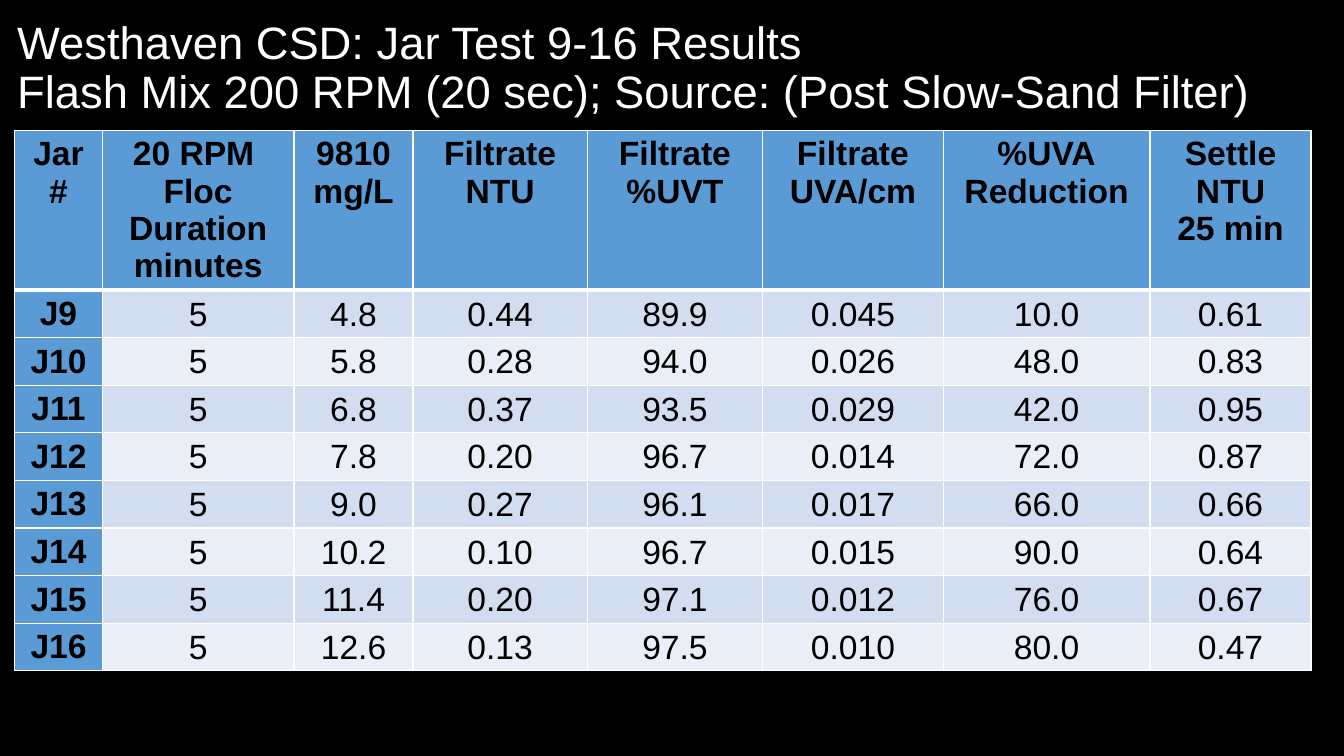
"""Build the jar test results slide."""
from lxml.etree import fromstring
from pptx import Presentation
from pptx.dml.color import RGBColor
from pptx.enum.text import MSO_ANCHOR, MSO_AUTO_SIZE, PP_ALIGN
from pptx.util import Cm, Pt

TITLE = [
    "Westhaven CSD: Jar Test 9-16 Results",
    "Flash Mix 200 RPM (20 sec); Source: (Post Slow-Sand Filter)",
]
HEAD = ["Jar\n#", "20 RPM \nFloc\nDuration\nminutes", "9810\nmg/L", "Filtrate\nNTU",
        "Filtrate\n%UVT", "Filtrate\nUVA/cm", "%UVA\nReduction", "Settle\nNTU\n25 min"]
JARS = [
    ("J9", "5", "4.8", "0.44", "89.9", "0.045", "10.0", "0.61"),
    ("J10", "5", "5.8", "0.28", "94.0", "0.026", "48.0", "0.83"),
    ("J11", "5", "6.8", "0.37", "93.5", "0.029", "42.0", "0.95"),
    ("J12", "5", "7.8", "0.20", "96.7", "0.014", "72.0", "0.87"),
    ("J13", "5", "9.0", "0.27", "96.1", "0.017", "66.0", "0.66"),
    ("J14", "5", "10.2", "0.10", "96.7", "0.015", "90.0", "0.64"),
    ("J15", "5", "11.4", "0.20", "97.1", "0.012", "76.0", "0.67"),
    ("J16", "5", "12.6", "0.13", "97.5", "0.010", "80.0", "0.47"),
]
WIDTHS = [2.21, 4.83, 3, 4.39, 4.42, 4.55, 5.21, 4.06]
HEIGHTS = [2.64] + [1.12] * len(JARS)
COLORS = {"back": "000000", "title": "FFFFFF", "text": "000000", "line": "FFFFFF",
          "head": "5B9BD5", "odd": "D2DEEF", "even": "EAEFF7"}
FONT = "Arial"
DML = "http://schemas.openxmlformats.org/drawingml/2006/main"


def color(name):
    return RGBColor.from_string(COLORS[name])


def style(par, size, name, bold, align):
    par.alignment = align
    font = par.font
    font.name, font.size, font.bold = FONT, Pt(size), bold
    font.color.rgb = color(name)


def edge(cell, row):
    props = cell._tc.get_or_add_tcPr()
    thick = {"T": 3 if row == 1 else 1, "B": 3 if row == 0 else 1}
    for spot, side in enumerate("LRTB"):
        width = Pt(thick.get(side, 1))
        props.insert(spot, fromstring(
            f'<a:ln{side} xmlns:a="{DML}" w="{width}"><a:solidFill>'
            f'<a:srgbClr val="{COLORS["line"]}"/></a:solidFill></a:ln{side}>'))


def fill_cell(cell, text, row, col):
    label = row == 0 or col == 0
    cell.text = text
    for par in cell.text_frame.paragraphs:
        style(par, 24, "text", label, PP_ALIGN.CENTER)
    if not label:
        cell.vertical_anchor = MSO_ANCHOR.MIDDLE
        cell.margin_left = cell.margin_right = cell.margin_top = Cm(0.03)
        cell.margin_bottom = 0
    cell.fill.solid()
    cell.fill.fore_color.rgb = color("head" if label else "odd" if row % 2 else "even")
    edge(cell, row)


def add_title(slide):
    title = slide.shapes.title
    title.left, title.top, title.width, title.height = Cm(0.18), Cm(0.3), Cm(33.1), Cm(2.9)
    frame = title.text_frame
    frame.auto_size = MSO_AUTO_SIZE.NONE
    frame.vertical_anchor = MSO_ANCHOR.MIDDLE
    par = frame.paragraphs[0]
    par.text = "\n".join(TITLE)
    par.line_spacing = 0.9
    style(par, 32.4, "title", False, PP_ALIGN.LEFT)


def add_grid(slide):
    rows = [HEAD, *JARS]
    table = slide.shapes.add_table(len(rows), len(HEAD), Cm(0.37), Cm(3.28),
                                   Cm(sum(WIDTHS)), Cm(sum(HEIGHTS))).table
    for column, width in zip(table.columns, WIDTHS):
        column.width = Cm(width)
    for line, height in zip(table.rows, HEIGHTS):
        line.height = Cm(height)
    for row, texts in enumerate(rows):
        for col, text in enumerate(texts):
            fill_cell(table.cell(row, col), text, row, col)


def main():
    deck = Presentation()
    deck.slide_width, deck.slide_height = Cm(33.87), Cm(19.05)
    slide = deck.slides.add_slide(deck.slide_layouts[5])
    back = slide.background.fill
    back.solid()
    back.fore_color.rgb = color("back")
    add_title(slide)
    add_grid(slide)
    deck.save("out.pptx")


if __name__ == "__main__":
    main()
